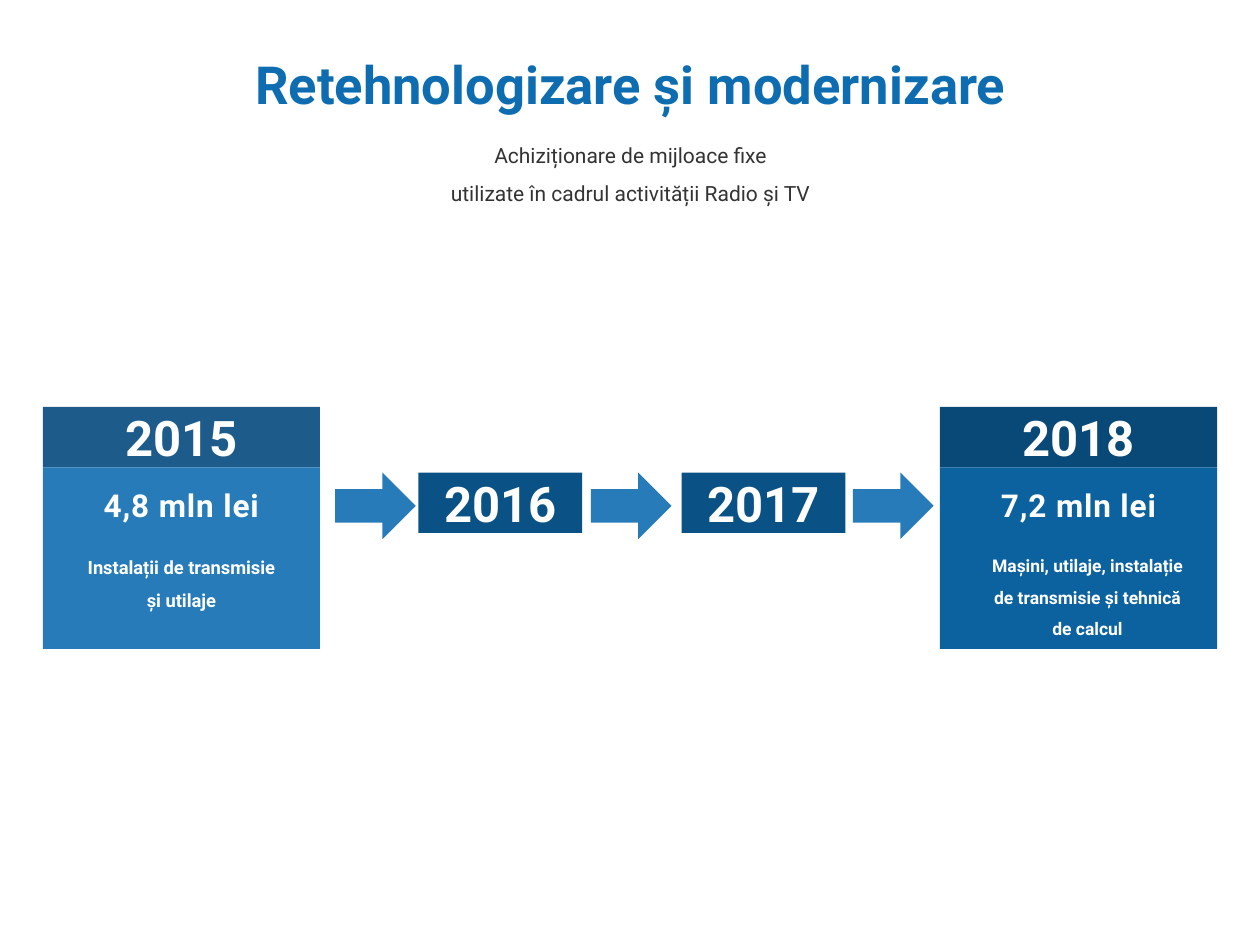
from dataclasses import dataclass

from pptx import Presentation
from pptx.dml.color import RGBColor
from pptx.enum import shapes, text
from pptx.util import Inches, Pt


@dataclass(frozen=True)
class Theme:
    font: str = "Roboto"
    title: str = "0E6DB1"
    body: str = "333333"
    white: str = "FFFFFF"
    arrow: str = "267BB8"
    middle_year: str = "0A5285"
    start_header: str = "1D5C8A"
    start_panel: str = "267BB8"
    end_header: str = "094977"
    end_panel: str = "0C619F"
    title_size: float = 30
    subtitle_size: float = 12
    year_size: float = 28
    amount_size: float = 18


THEME = Theme()
YEAR_HEIGHT = 0.48


def write(frame, lines, size, color, bold=True, spacing=None, after=None, tracking=None):
    """Fill a text frame with centred lines, one paragraph each."""
    frame.word_wrap = True
    frame.vertical_anchor = text.MSO_ANCHOR.MIDDLE
    frame.margin_left = frame.margin_right = Inches(0.07)
    frame.margin_top = frame.margin_bottom = Inches(0.04)
    for index, line in enumerate(lines):
        paragraph = frame.paragraphs[0] if index == 0 else frame.add_paragraph()
        paragraph.alignment = text.PP_ALIGN.CENTER
        if spacing is not None:
            paragraph.line_spacing = spacing
        if after is not None:
            paragraph.space_after = Pt(after)
        run = paragraph.add_run()
        run.text = line
        run.font.name = THEME.font
        run.font.size = Pt(size)
        run.font.bold = bold
        run.font.color.rgb = RGBColor.from_string(color)
        if tracking is not None:
            run._r.get_or_add_rPr().set("spc", str(int(tracking * 100)))


def add_text(slide, box, lines, size, color, **style):
    label = slide.shapes.add_textbox(*map(Inches, box))
    write(label.text_frame, lines, size, color, **style)


def add_block(slide, box, fill, kind=shapes.MSO_SHAPE.RECTANGLE):
    block = slide.shapes.add_shape(kind, *map(Inches, box))
    block.shadow.inherit = False
    block.fill.solid()
    block.fill.fore_color.rgb = RGBColor.from_string(fill)
    block.line.fill.background()
    return block


def add_year(slide, box, year, fill):
    block = add_block(slide, box, fill)
    write(block.text_frame, [year], THEME.year_size, THEME.white)


def add_heading(slide, box):
    left, top, width, _ = box
    add_text(slide, (left, top, width, 0.56), ["Retehnologizare și modernizare"],
             THEME.title_size, THEME.title)
    add_text(slide, (left, top + 0.71, width, 0.48),
             ["Achiziționare de mijloace fixe",
              "utilizate în cadrul activității Radio și TV"],
             THEME.subtitle_size, THEME.body, bold=False, spacing=1.5)


def add_card(slide, box, year, amount, detail, detail_size, detail_offset, header, panel):
    """Year header over a panel holding the amount and what it bought."""
    left, top, width, height = box
    add_year(slide, (left, top, width, YEAR_HEIGHT), year, header)
    add_block(slide, (left, top + YEAR_HEIGHT, width, height - YEAR_HEIGHT), panel)
    label_width = 1.68
    label_left = left + (width - label_width) / 2
    add_text(slide, (label_left, top + 0.59, label_width, 0.37), [amount],
             THEME.amount_size, THEME.white, tracking=0.5)
    dx, dy = detail_offset
    add_text(slide, (label_left + dx, top + dy, label_width, 0.46), [detail],
             detail_size, THEME.white, spacing=1.5, after=6)


def add_timeline(slide, box):
    """Arrows and middle years between the two cards."""
    left, top, _, height = box
    for offset in (0, 2.03, 4.11):
        add_block(slide, (left + offset, top, 0.64, height), THEME.arrow,
                  shapes.MSO_SHAPE.RIGHT_ARROW)
    for offset, year in ((0.66, "2016"), (2.75, "2017")):
        add_year(slide, (left + offset, top, 1.3, YEAR_HEIGHT), year, THEME.middle_year)


def main():
    deck = Presentation()
    deck.slide_width, deck.slide_height = Inches(10), Inches(7.5)
    slide = deck.slides.add_slide(deck.slide_layouts[6])

    add_heading(slide, (0.63, 0.38, 8.75, 1.19))
    add_card(slide, (0.34, 3.23, 2.2, 1.92), "2015", "4,8 mln lei",
             "Instalații de transmisie și utilaje", 10.5, (0, 1.13),
             THEME.start_header, THEME.start_panel)
    add_timeline(slide, (2.66, 3.75, 4.75, 0.53))
    add_card(slide, (7.46, 3.23, 2.2, 1.92), "2018", "7,2 mln lei",
             "Mașini, utilaje, instalație de transmisie și tehnică de calcul", 10,
             (0.07, 1.24), THEME.end_header, THEME.end_panel)

    deck.save("out.pptx")


if __name__ == "__main__":
    main()
